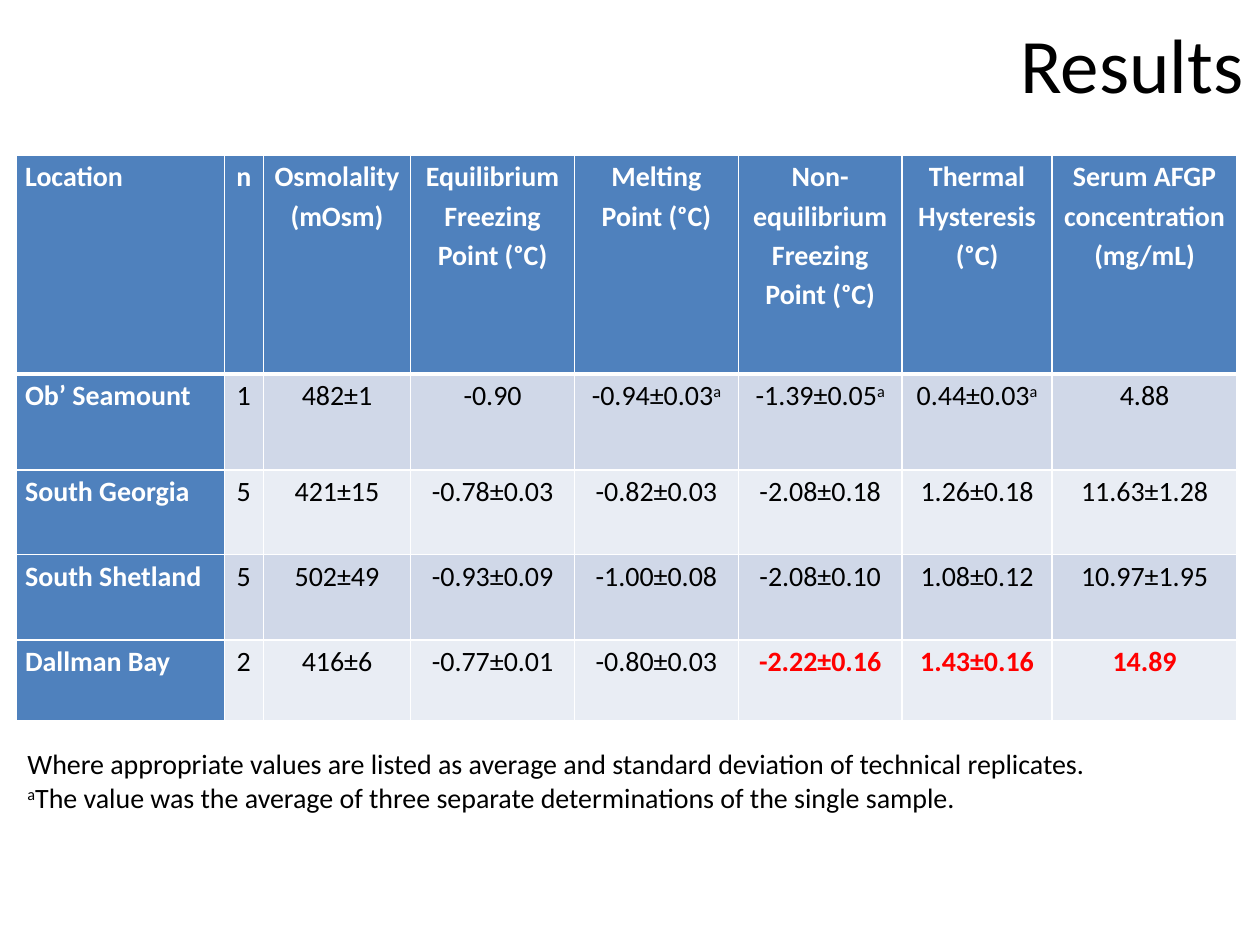
import lxml.etree
import pptx
import pptx.dml.color
import pptx.enum.text
import pptx.oxml.ns
import pptx.util

COLORS = {"ink": "000000", "paper": "FFFFFF", "header": "4F81BD",
          "odd": "D0D8E8", "even": "E9EDF4", "highlight": "FF0000"}
FONT = "Calibri"
UNIT = pptx.util.Inches(0.1)
TITLE_BOX = (5, 0, 94.7, 9.9)
TABLE_BOX = (1.3, 12.3, 96.9, 44.9)
NOTE_BOX = (1.2, 58.8, 100, 6.4)
COLUMN_SHARES = (16.5, 3.1, 11.7, 13, 13, 13, 11.9, 14.7)
ROW_SHARES = (17.4, 7.6, 6.7, 6.8, 6.4)
ROWS = (
    ("Location", "n", "Osmolality (mOsm)", "Equilibrium Freezing Point (ᵒC)",
     "Melting Point (ᵒC)", "Non-equilibrium Freezing Point (ᵒC)",
     "Thermal Hysteresis (ᵒC)", "Serum AFGP concentration (mg/mL)"),
    ("Ob’ Seamount", "1", "482±1", "-0.90", "-0.94±0.03^a", "-1.39±0.05^a",
     "0.44±0.03^a", "4.88"),
    ("South Georgia", "5", "421±15", "-0.78±0.03", "-0.82±0.03", "-2.08±0.18",
     "1.26±0.18", "11.63±1.28"),
    ("South Shetland", "5", "502±49", "-0.93±0.09", "-1.00±0.08", "-2.08±0.10",
     "1.08±0.12", "10.97±1.95"),
    ("Dallman Bay", "2", "416±6", "-0.77±0.01", "-0.80±0.03", "-2.22±0.16",
     "1.43±0.16", "14.89"),
)
HIGHLIGHTED = {(4, 5), (4, 6), (4, 7)}
NOTES = (
    "Where appropriate values are listed as average and standard deviation of technical replicates.",
    "^a^The value was the average of three separate determinations of the single sample.",
)


def rgb(name):
    """Return the named colour."""
    return pptx.dml.color.RGBColor.from_string(COLORS[name])


def grid(box):
    """Turn grid columns and rows into slide lengths."""
    return [round(length * UNIT) for length in box]


def write(para, text, size=16, color="ink", bold=False):
    """Add runs to a paragraph, raising the text between carets."""
    for index, part in enumerate(text.split("^")):
        if part:
            span = para.add_run()
            span.text = part
            span.font.name = FONT
            span.font.size = pptx.util.Pt(size)
            span.font.bold = bold
            span.font.color.rgb = rgb(color)
            if index % 2:
                span.font._element.set("baseline", "30000")


def draw_borders(cell, top, bottom):
    """Line a cell in white with the given top and bottom widths."""
    properties = cell._tc.get_or_add_tcPr()
    for index, (side, width) in enumerate((("L", 1), ("R", 1), ("T", top), ("B", bottom))):
        line = lxml.etree.Element(pptx.oxml.ns.qn(f"a:ln{side}"), w=str(pptx.util.Pt(width)))
        fill = lxml.etree.SubElement(line, pptx.oxml.ns.qn("a:solidFill"))
        lxml.etree.SubElement(fill, pptx.oxml.ns.qn("a:srgbClr"), val=COLORS["paper"])
        properties.insert(index, line)


def fill_cell(cell, text, row, column):
    """Write and style one cell by its place in the table."""
    heading = row == 0 or column == 0
    highlighted = (row, column) in HIGHLIGHTED
    cell.margin_left = cell.margin_right = pptx.util.Inches(0.07)
    cell.margin_top = cell.margin_bottom = 0
    cell.fill.solid()
    cell.fill.fore_color.rgb = rgb("header" if heading else "odd" if row % 2 else "even")
    draw_borders(cell, 3 if row == 1 else 1, 3 if row == 0 else 1)
    para = cell.text_frame.paragraphs[0]
    align = pptx.enum.text.PP_ALIGN
    para.alignment = align.CENTER if column else align.LEFT
    para.line_spacing = 1.15
    para.space_after = pptx.util.Pt(10)
    color = "paper" if heading else "highlight" if highlighted else "ink"
    write(para, text, color=color, bold=heading or highlighted)


def add_title(page, box):
    """Place the slide title at the right of its box."""
    title = page.shapes.title
    title.left, title.top, title.width, title.height = grid(box)
    title.text_frame.vertical_anchor = pptx.enum.text.MSO_ANCHOR.MIDDLE
    para = title.text_frame.paragraphs[0]
    para.alignment = pptx.enum.text.PP_ALIGN.RIGHT
    write(para, "Results", size=44)


def add_results(page, box):
    """Fill the box with the table of measurements."""
    left, top, width, height = grid(box)
    table = page.shapes.add_table(
        len(ROWS), len(COLUMN_SHARES), left, top, width, height).table
    for column, share in zip(table.columns, COLUMN_SHARES):
        column.width = round(width * share / sum(COLUMN_SHARES))
    for row, share in zip(table.rows, ROW_SHARES):
        row.height = round(height * share / sum(ROW_SHARES))
    for row, texts in enumerate(ROWS):
        for column, text in enumerate(texts):
            fill_cell(table.cell(row, column), text, row, column)


def add_notes(page, box):
    """Place the table notes, one paragraph each."""
    frame = page.shapes.add_textbox(*grid(box)).text_frame
    frame.word_wrap = True
    frame.auto_size = pptx.enum.text.MSO_AUTO_SIZE.SHAPE_TO_FIT_TEXT
    for index, text in enumerate(NOTES):
        write(frame.add_paragraph() if index else frame.paragraphs[0], text)


def main():
    """Build and save the results slide."""
    deck = pptx.Presentation()
    deck.slide_width, deck.slide_height = grid((100, 75))
    page = deck.slides.add_slide(deck.slide_layouts.get_by_name("Title Only"))
    add_title(page, TITLE_BOX)
    add_results(page, TABLE_BOX)
    add_notes(page, NOTE_BOX)
    deck.save("out.pptx")


if __name__ == "__main__":
    main()
